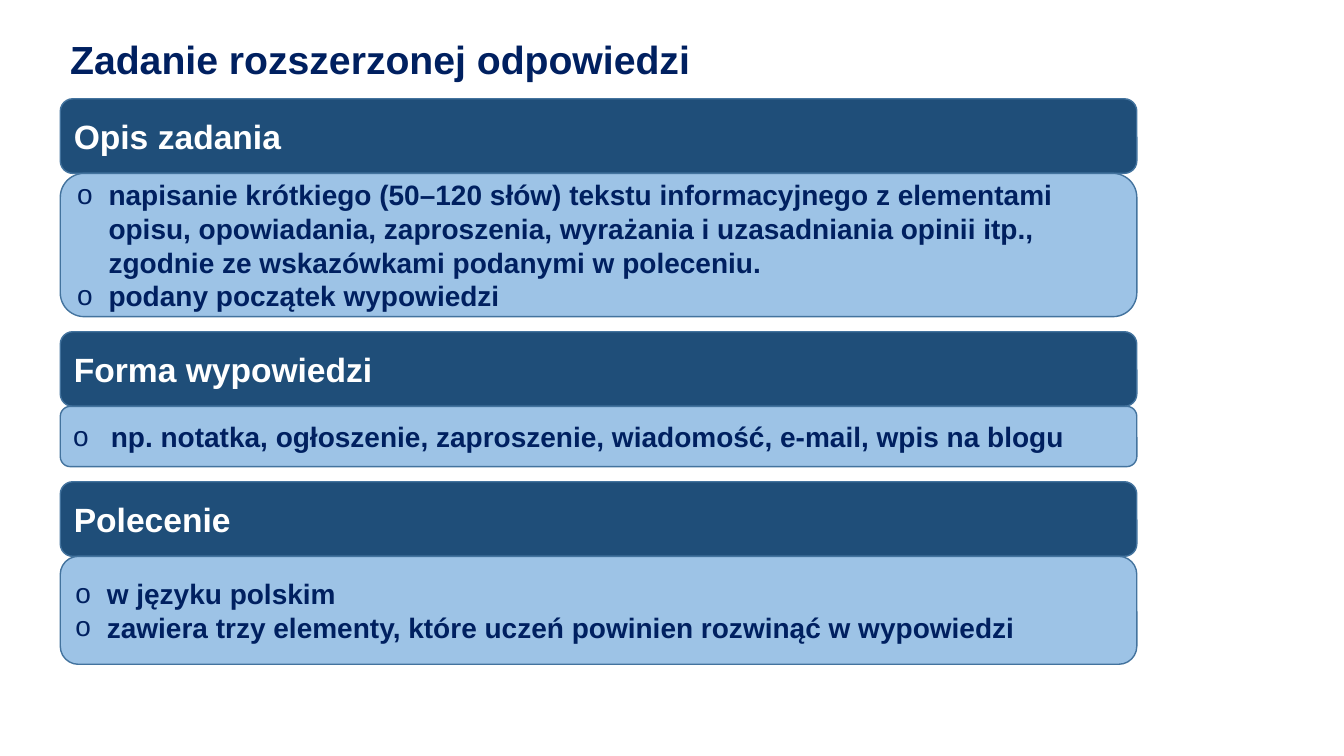
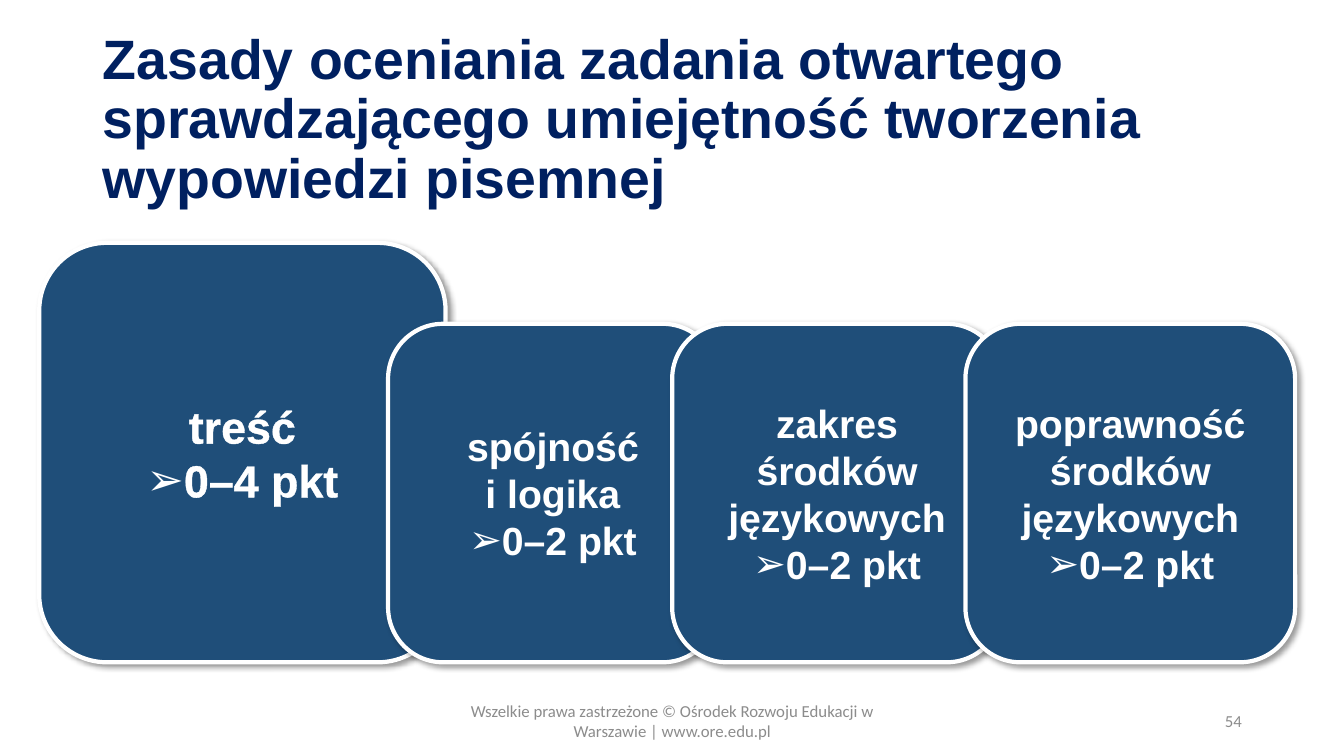
from dataclasses import dataclass
from lxml import etree
from pptx import Presentation
from pptx import util as u
from pptx.dml import color as c
from pptx.enum import shapes as s, text as t
from pptx.oxml import ns

HUE = {"navy": "002060", "dark": "1F4E79", "pale": "9DC3E6",
       "edge": "43739E", "white": "FFFFFF", "grey": "8C8C8C", "black": "000000"}
LEFT, MID, RIGHT = t.PP_ALIGN.LEFT, t.PP_ALIGN.CENTER, t.PP_ALIGN.RIGHT


@dataclass
class Box:
    left: float
    top: float
    wide: float
    high: float

    def place(self) -> tuple:
        return tuple(u.Cm(n) for n in (self.left, self.top, self.wide, self.high))


@dataclass
class Style:
    size: float
    hue: str
    font: str = "Arial"
    bold: bool = True
    align: t.PP_ALIGN = LEFT
    pitch: float | None = None
    line: float = 0


@dataclass
class Line:
    text: str
    mark: str = ""
    dent: float = 0.79


@dataclass
class Band:
    head: str
    high: float
    lines: list[Line]


@dataclass
class Tile:
    box: Box
    style: Style
    lines: list[Line]


HEAD = Style(24, "white")
BODY = Style(20, "navy")
FOOT = Style(12, "grey", "Calibri", False, MID)
PAGE = Style(12, "grey", "Calibri", False, RIGHT)
BIG = Style(32, "white", align=MID, line=0.75)
SMALL = Style(28, "white", align=MID)

BAND_LEFT, BAND_TOP, BAND_WIDE = 1.52, 2.49, 27.13
HEAD_HIGH, BAND_GAP = 1.88, 0.38
BANDS = [
    Band("Opis zadania", 3.61, [
        Line("napisanie krótkiego (50–120 słów) tekstu informacyjnego z elementami "
             "opisu, opowiadania, zaproszenia, wyrażania i uzasadniania opinii itp., "
             "zgodnie ze wskazówkami podanymi w poleceniu.", "o"),
        Line("podany początek wypowiedzi", "o")]),
    Band("Forma wypowiedzi", 1.52, [
        Line("np. notatka, ogłoszenie, zaproszenie, wiadomość, e-mail, wpis na blogu",
             "o", 0.95)]),
    Band("Polecenie", 2.72, [
        Line("w języku polskim", "o"),
        Line("zawiera trzy elementy, które uczeń powinien rozwinąć w wypowiedzi", "o")]),
]


def small(left: float, *words: str) -> Tile:
    lines = [Line(word) for word in words] + [Line("0–2 pkt", "➢")]
    return Tile(Box(left, 8.16, 8.31, 8.53), SMALL, lines)


TILES = [
    Tile(Box(0.99, 6.12, 10.24, 10.57), BIG, [Line("treść"), Line("0–4 pkt", "➢")]),
    small(9.78, "spójność", "i logika"),
    small(16.94, "zakres", "środków językowych"),
    small(24.33, "poprawność", "środków językowych"),
]


def tint(name: str) -> c.RGBColor:
    return c.RGBColor.from_string(HUE[name])


def add(root, tag: str, **attrs):
    return etree.SubElement(root, ns.qn(tag), {k: str(v) for k, v in attrs.items()})


def write(shape, lines: list[Line], style: Style) -> None:
    frame = shape.text_frame
    frame.word_wrap = True
    frame.vertical_anchor = t.MSO_ANCHOR.MIDDLE
    frame.text = "\n".join(line.text for line in lines)
    for para, line in zip(frame.paragraphs, lines):
        para.alignment = style.align
        if style.pitch:
            para.line_spacing = style.pitch
        if line.mark:
            props = para._p.get_or_add_pPr()
            dent = u.Cm(line.dent)
            props.set("marL", str(dent))
            props.set("indent", str(-dent))
            add(props, "a:buFont", typeface="Arial")
            add(props, "a:buChar", char=line.mark)
        for run in para.runs:
            font = run.font
            font.name, font.size, font.bold = style.font, u.Pt(style.size), style.bold
            font.color.rgb = tint(style.hue)
            if style.line:
                edge = etree.Element(ns.qn("a:ln"), w=str(u.Pt(style.line)))
                add(add(edge, "a:solidFill"), "a:srgbClr", val=HUE[style.hue])
                font._element.insert(0, edge)


def label(slide, box: Box, text: str, style: Style) -> None:
    write(slide.shapes.add_textbox(*box.place()), [Line(text)], style)


def title(slide, box: Box, text: str, size: float) -> None:
    label(slide, box, text, Style(size, "navy", pitch=0.9))


def panel(slide, box: Box, fill: str, edge: str, width: float,
          lines: list[Line], style: Style):
    shape = slide.shapes.add_shape(s.MSO_SHAPE.ROUNDED_RECTANGLE, *box.place())
    shape.shadow.inherit = False
    shape.fill.solid()
    shape.fill.fore_color.rgb = tint(fill)
    shape.line.color.rgb = tint(edge)
    shape.line.width = u.Pt(width)
    write(shape, lines, style)
    return shape


def shade(shape) -> None:
    root = shape._element.spPr.find(ns.qn("a:effectLst"))
    cast = add(root, "a:outerShdw", blurRad=u.Pt(4), dist=u.Pt(3),
               dir=45 * 60000, rotWithShape=0)
    add(add(cast, "a:srgbClr", val=HUE["black"]), "a:alpha", val=40000)


def draw_task(slide) -> None:
    title(slide, Box(1.52, 0.69, 22.86, 1.75), "Zadanie rozszerzonej odpowiedzi", 28)
    top = BAND_TOP
    for band in BANDS:
        panel(slide, Box(BAND_LEFT, top, BAND_WIDE, HEAD_HIGH),
              "dark", "edge", 1, [Line(band.head)], HEAD)
        top += HEAD_HIGH
        panel(slide, Box(BAND_LEFT, top, BAND_WIDE, band.high),
              "pale", "edge", 1, band.lines, BODY)
        top += band.high + BAND_GAP


def draw_marks(slide) -> None:
    title(slide, Box(2.34, 1.02, 29.21, 4.06),
          "Zasady oceniania zadania otwartego sprawdzającego umiejętność "
          "tworzenia wypowiedzi pisemnej", 39.6)
    label(slide, Box(11.23, 17.65, 11.43, 1.02),
          "Wszelkie prawa zastrzeżone © Ośrodek Rozwoju Edukacji w Warszawie "
          "| www.ore.edu.pl", FOOT)
    label(slide, Box(23.93, 17.65, 7.62, 1.02), "54", PAGE)
    for tile in TILES:
        shade(panel(slide, tile.box, "dark", "white", 3, tile.lines, tile.style))


def main() -> None:
    deck = Presentation()
    deck.slide_width, deck.slide_height = u.Cm(33.87), u.Cm(19.05)
    for draw in (draw_task, draw_marks):
        draw(deck.slides.add_slide(deck.slide_layouts[6]))
    deck.save("out.pptx")


if __name__ == "__main__":
    main()
